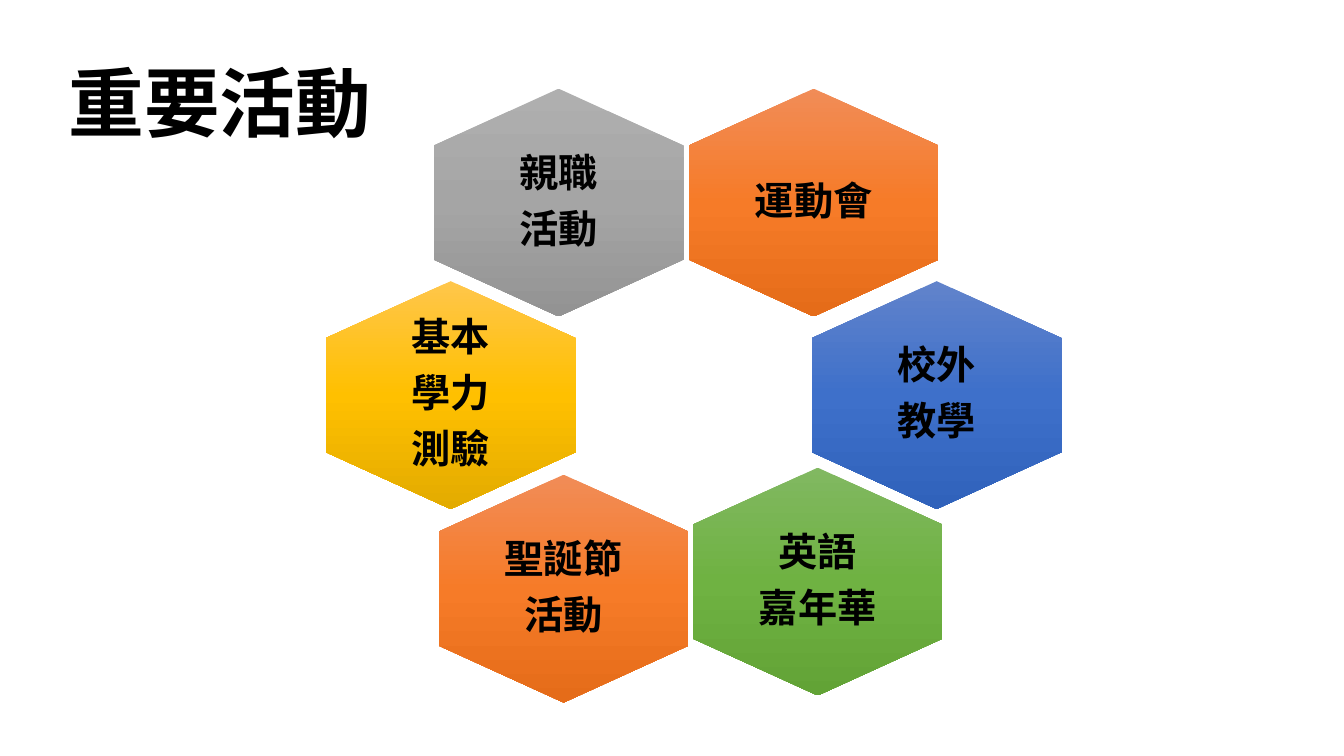
from lxml import etree
from pptx import Presentation
from pptx.dml.color import RGBColor
from pptx.enum.shapes import MSO_SHAPE
from pptx.enum.text import MSO_ANCHOR, PP_ALIGN
from pptx.oxml.ns import qn
from pptx.util import Inches, Pt

BLACK = RGBColor(0x00, 0x00, 0x00)
# Gradient stops: top, middle, bottom
ORANGE = [RGBColor(0xF1, 0x8C, 0x57), RGBColor(0xF6, 0x7B, 0x28), RGBColor(0xE5, 0x6C, 0x19)]
GREY = [RGBColor(0xAF, 0xAF, 0xAF), RGBColor(0xA5, 0xA5, 0xA5), RGBColor(0x93, 0x93, 0x93)]
YELLOW = [RGBColor(0xFF, 0xC6, 0x4B), RGBColor(0xFF, 0xC0, 0x00), RGBColor(0xE3, 0xAB, 0x00)]
BLUE = [RGBColor(0x61, 0x83, 0xCB), RGBColor(0x3E, 0x70, 0xCA), RGBColor(0x30, 0x62, 0xBB)]
GREEN = [RGBColor(0x81, 0xB8, 0x61), RGBColor(0x6F, 0xB2, 0x42), RGBColor(0x62, 0xA3, 0x36)]

HEX_W, HEX_H = 2.26, 2.48
LABEL_W, LABEL_H = 1.66, 1.5


def write_text(tf, lines, size, font, align, after=None):
    """Write one bold paragraph per line; after is a percentage of the line."""
    tf.word_wrap = True
    tf.vertical_anchor = MSO_ANCHOR.MIDDLE
    for i, line in enumerate(lines):
        p = tf.paragraphs[0] if i == 0 else tf.add_paragraph()
        if after:
            spacing = etree.SubElement(p._p.get_or_add_pPr(), qn("a:spcAft"))
            etree.SubElement(spacing, qn("a:spcPct"), val=str(after * 1000))
        p.alignment = align
        p.line_spacing = 0.9
        r = p.add_run()
        r.text = line
        r.font.size = Pt(size)
        r.font.bold = True
        r.font.name = font
        r.font.color.rgb = BLACK
        if font != "Calibri":
            etree.SubElement(r._r.get_or_add_rPr(), qn("a:ea"), typeface=font)


def fill_gradient(sp, colors):
    """Fill from top to bottom, whatever the rotation of the shape."""
    sp.fill.gradient()
    grad = sp._element.spPr.find(qn("a:gradFill"))
    grad.set("rotWithShape", "0")
    stops = grad.find(qn("a:gsLst"))
    for stop in list(stops):
        stops.remove(stop)
    for pos, color in zip((0, 50000, 100000), colors):
        stop = etree.SubElement(stops, qn("a:gs"), pos=str(pos))
        etree.SubElement(stop, qn("a:srgbClr"), val=str(color))
    grad.find(qn("a:lin")).set("ang", "5400000")


prs = Presentation()
prs.slide_width, prs.slide_height = Inches(13.33), Inches(7.5)
slide = prs.slides.add_slide(prs.slide_layouts[5])

# Title
title = slide.shapes.title
title.left, title.top = Inches(0.58), Inches(0.34)
title.width, title.height = Inches(11.5), Inches(1.45)
write_text(title.text_frame, ["重要活動"], size=54, font="Calibri", align=PP_ALIGN.LEFT)

# Ring of activities: left, top, colours, label lines
activities = [
    (6.94, 0.77, ORANGE, ["運動會"]),
    (4.41, 0.77, GREY, ["親職", "活動"]),
    (3.34, 2.68, YELLOW, ["基本", "學力", "測驗"]),
    (8.16, 2.68, BLUE, ["校外", "教學"]),
    (6.98, 4.53, GREEN, ["英語", "嘉年華"]),
    (4.46, 4.6, ORANGE, ["聖誕節", "活動"]),
]
for left, top, colors, lines in activities:
    sp = slide.shapes.add_shape(MSO_SHAPE.HEXAGON, Inches(left), Inches(top),
                                Inches(HEX_W), Inches(HEX_H))
    sp.rotation = 90
    sp.adjustments[0] = 0.25
    sp.shadow.inherit = False
    sp.line.fill.background()
    fill_gradient(sp, colors)

    # Upright label centred on the hexagon
    label = slide.shapes.add_textbox(Inches(left + (HEX_W - LABEL_W) / 2),
                                     Inches(top + (HEX_H - LABEL_H) / 2),
                                     Inches(LABEL_W), Inches(LABEL_H))
    tf = label.text_frame
    tf.margin_left = tf.margin_right = tf.margin_top = tf.margin_bottom = 0
    write_text(tf, lines, size=28, font="Noto Sans CJK SC", align=PP_ALIGN.CENTER, after=35)

prs.save("out.pptx")
